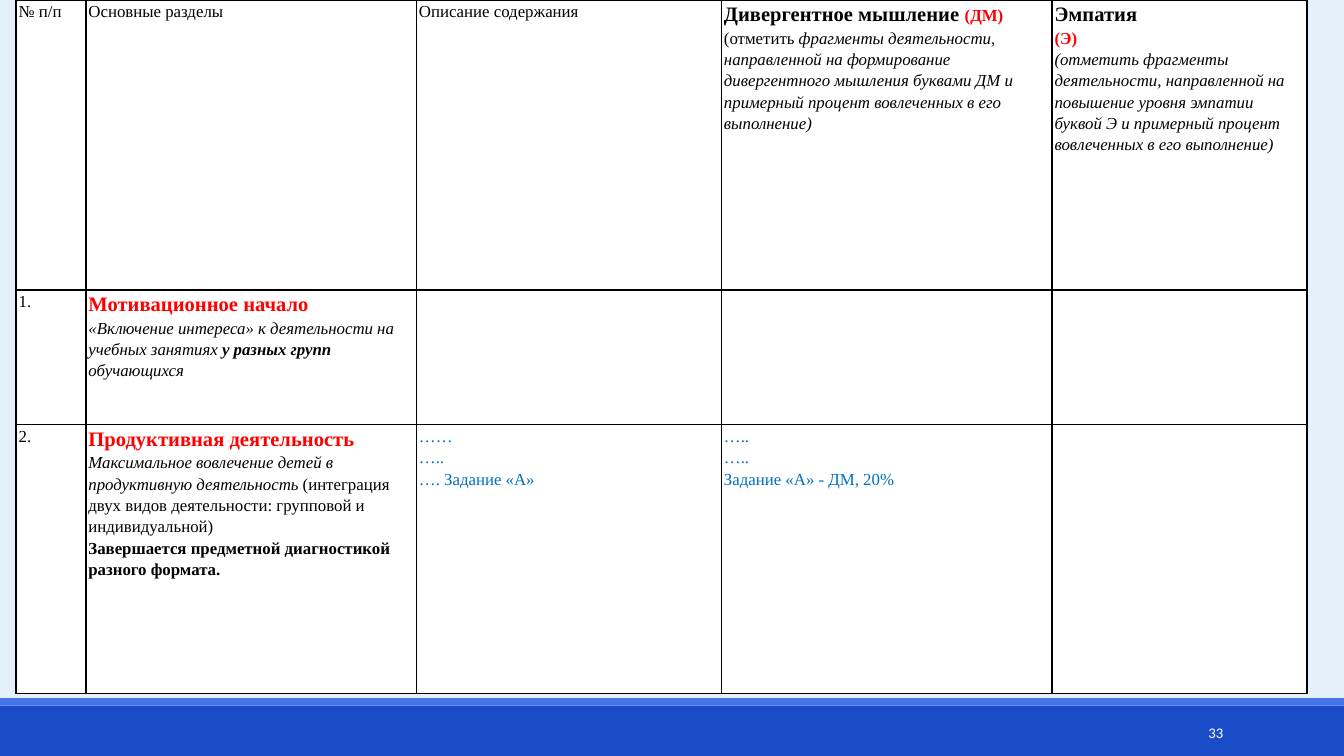
from lxml import etree
from pptx import Presentation
from pptx.dml.color import RGBColor
from pptx.enum import shapes, text
from pptx.oxml.ns import qn
from pptx.util import Pt

BACKGROUND = RGBColor(0xE4, 0xF1, 0xFA)
NAVY = RGBColor(0x1A, 0x4C, 0xC8)
BLUE = RGBColor(0x47, 0x75, 0xE7)
WHITE = RGBColor(0xFF, 0xFF, 0xFF)
BLACK = RGBColor(0, 0, 0)
RED = RGBColor(0xFF, 0, 0)
TASK_BLUE = RGBColor(0x00, 0x70, 0xC0)

WIDTH, HEIGHT = 720, 405
COLUMNS = [37.4, 177.1, 163.4, 177.1, 136.8]
ROWS = [155.5, 72, 144]


# Run styles: (text, size, colour, bold, italic)
def plain(words, color=BLACK):
    return words, 9, color, False, False


def italic(words, bold=False):
    return words, 9, BLACK, bold, True


def bold(words, size=9, color=BLACK):
    return words, size, color, True, False


# Each cell is a list of paragraphs, each paragraph a list of runs
CONTENT = [
    [
        [[plain("№ п/п")]],
        [[plain("Основные разделы")]],
        [[plain("Описание содержания")]],
        [[bold("Дивергентное мышление ", 11), bold("(ДМ)", color=RED)],
         [plain("(отметить"),
          italic(" фрагменты деятельности, направленной на формирование "
                 "дивергентного мышления буквами ДМ и примерный процент "
                 "вовлеченных в его выполнение)")]],
        [[bold("Эмпатия", 11), plain(" ")],
         [bold("(Э)", color=RED)],
         [italic("(отметить фрагменты деятельности, направленной на "
                 "повышение уровня эмпатии буквой Э и примерный процент "
                 "вовлеченных в его выполнение)")]],
    ],
    [
        [[plain("1.")]],
        [[bold("Мотивационное начало", 11, RED)],
         [italic("«Включение интереса» к деятельности на учебных занятиях "),
          italic("у разных групп", bold=True),
          italic(" обучающихся")]],
        [], [], [],
    ],
    [
        [[plain("2.")]],
        [[bold("Продуктивная деятельность ", 11, RED),
          italic("Максимальное вовлечение детей в продуктивную деятельность"),
          plain(" (интеграция двух видов деятельности: групповой и "
                "индивидуальной)")],
         [bold("Завершается предметной диагностикой разного формата.")]],
        [[plain(line, TASK_BLUE)] for line in ("……", "…..", "…. Задание «А»")],
        [[plain(line, TASK_BLUE)]
         for line in ("…..", "…..", "Задание «А» - ДМ, 20%")],
        [],
    ],
]


def add_band(slide, top, height, color):
    sp = slide.shapes.add_shape(shapes.MSO_SHAPE.RECTANGLE,
                                0, Pt(top), Pt(WIDTH), Pt(height))
    sp.shadow.inherit = False
    sp.fill.solid()
    sp.fill.fore_color.rgb = color
    sp.line.fill.background()


def add_run(p, words, size, color, is_bold, is_italic, font="Times New Roman"):
    r = p.add_run()
    r.text = words
    r.font.name = font
    r.font.size = Pt(size)
    r.font.color.rgb = color
    r.font.bold = is_bold
    r.font.italic = is_italic


def add_page_number(slide, number):
    sp = slide.shapes.add_textbox(Pt(584.6), Pt(381.6), Pt(77.8), Pt(21.6))
    tf = sp.text_frame
    tf.word_wrap = True
    tf.vertical_anchor = text.MSO_ANCHOR.MIDDLE
    p = tf.paragraphs[0]
    p.alignment = text.PP_ALIGN.RIGHT
    add_run(p, number, 7.9, WHITE, False, False, font="Calibri")


def set_borders(cell):
    props = cell._tc.get_or_add_tcPr()
    for i, side in enumerate(("a:lnL", "a:lnR", "a:lnT", "a:lnB")):
        ln = etree.Element(qn(side), w=str(Pt(1)))
        fill = etree.SubElement(ln, qn("a:solidFill"))
        etree.SubElement(fill, qn("a:srgbClr"), val=str(BLACK))
        props.insert(i, ln)


def fill_cell(cell, paragraphs):
    cell.fill.solid()
    cell.fill.fore_color.rgb = WHITE
    cell.margin_left = cell.margin_right = Pt(1.4)
    cell.margin_top = cell.margin_bottom = 0
    set_borders(cell)
    tf = cell.text_frame
    for i, runs in enumerate(paragraphs):
        p = tf.add_paragraph() if i else tf.paragraphs[0]
        p.line_spacing = 1.15
        for run in runs:
            add_run(p, *run)


def add_lesson_table(slide):
    frame = slide.shapes.add_table(len(ROWS), len(COLUMNS), Pt(8.6), 0,
                                   Pt(sum(COLUMNS)), Pt(sum(ROWS)))
    table = frame.table
    for column, width in zip(table.columns, COLUMNS):
        column.width = Pt(width)
    for row, height, cells in zip(table.rows, ROWS, CONTENT):
        row.height = Pt(height)
        for cell, paragraphs in zip(row.cells, cells):
            fill_cell(cell, paragraphs)


def main():
    prs = Presentation()
    prs.slide_width, prs.slide_height = Pt(WIDTH), Pt(HEIGHT)
    slide = prs.slides.add_slide(prs.slide_layouts[6])
    slide.background.fill.solid()
    slide.background.fill.fore_color.rgb = BACKGROUND

    # Footer
    add_band(slide, 378, 27, NAVY)
    add_band(slide, 374, 4, BLUE)
    add_page_number(slide, "33")

    # Lesson plan
    add_lesson_table(slide)
    prs.save("out.pptx")


if __name__ == "__main__":
    main()
